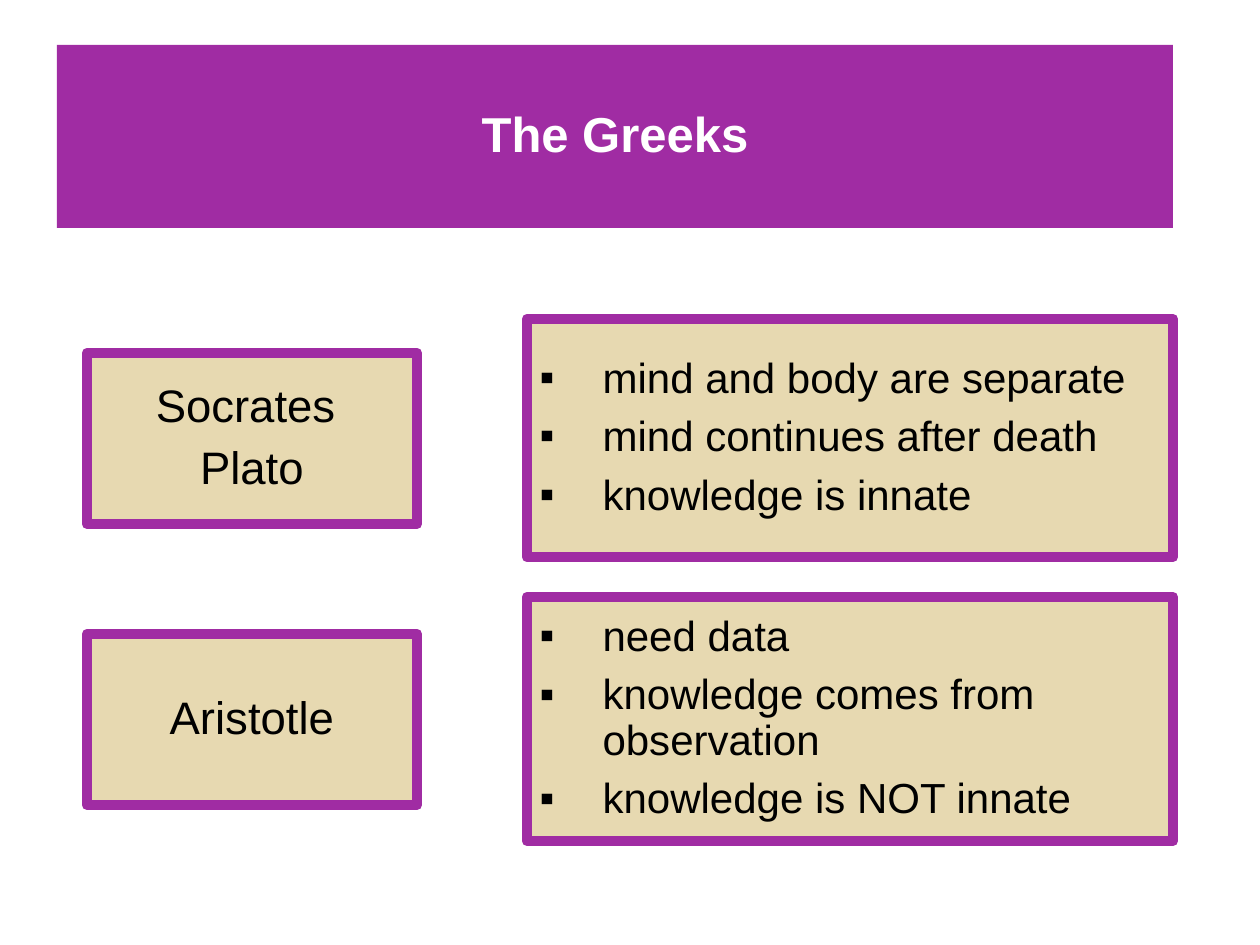
from lxml.etree import SubElement
from pptx import Presentation
from pptx.dml.color import RGBColor
from pptx.enum.text import MSO_ANCHOR, MSO_AUTO_SIZE, PP_ALIGN
from pptx.oxml.ns import qn
from pptx.util import Emu, Pt

PX = 914400 // 126
COLORS = {"purple": "A02CA3", "sand": "E7D9B1", "white": "FFFFFF", "black": "000000"}
FONT = "Arial"
INDENT = 63

# Two columns: names on the left, ideas on the right
NAME_X, NAME_W, NAME_H = 87, 330, 171
IDEA_X, IDEA_W = 527, 646

# Name top, names, idea top, idea height, ideas
ROWS = [
    (353, ["Socrates ", "Plato"], 319, 238,
     ["mind and body are separate", "mind continues after death", "knowledge is innate"]),
    (634, ["Aristotle"], 597, 244,
     ["need data", "knowledge comes from observation", "knowledge is NOT innate"]),
]


def px(n):
    return Emu(n * PX)


def rgb(name):
    return RGBColor.from_string(COLORS[name])


def place(sp, x, y, w, h, fill):
    """Position and fill a placeholder, with its text in the middle."""
    sp.left, sp.top, sp.width, sp.height = px(x), px(y), px(w), px(h)
    sp.fill.solid()
    sp.fill.fore_color.rgb = rgb(fill)
    tf = sp.text_frame
    tf.word_wrap = True
    tf.auto_size = MSO_AUTO_SIZE.NONE
    tf.vertical_anchor = MSO_ANCHOR.MIDDLE


def add_text(p, text, size, color, bold=False):
    p.line_spacing = 0.9
    r = p.add_run()
    r.text = text
    r.font.name, r.font.size, r.font.bold = FONT, Pt(size), bold
    r.font.color.rgb = rgb(color)


def set_bullet(p):
    """Give a paragraph a square bullet with a hanging indent."""
    pPr = p._p.get_or_add_pPr()
    pPr.set("marL", str(px(INDENT)))
    pPr.set("indent", str(px(-INDENT)))
    SubElement(pPr, qn("a:buFont"), typeface=FONT)
    SubElement(pPr, qn("a:buChar"), char="▪")


def fill_title(sp, text):
    place(sp, 57, 45, 1116, 183, "purple")
    p = sp.text_frame.paragraphs[0]
    p.alignment = PP_ALIGN.CENTER
    add_text(p, text, 28, "white", bold=True)


def fill_box(sp, x, y, w, h, lines, size, bulleted=False):
    place(sp, x, y, w, h, "sand")
    sp.line.color.rgb = rgb("purple")
    sp.line.width = Pt(6)
    tf = sp.text_frame
    for i, text in enumerate(lines):
        p = tf.add_paragraph() if i else tf.paragraphs[0]
        p.alignment = PP_ALIGN.LEFT if bulleted else PP_ALIGN.CENTER
        p.space_before = Pt(7.5)
        add_text(p, text, size, "black")
        if bulleted:
            set_bullet(p)


def main():
    prs = Presentation()
    prs.slide_width, prs.slide_height = px(1260), px(945)
    # The comparison layout has a title and four body placeholders
    s = prs.slides.add_slide(prs.slide_layouts[4])
    bodies = {sp.placeholder_format.idx: sp for sp in s.placeholders}

    fill_title(s.shapes.title, "The Greeks")

    # Names and their ideas, row by row
    for (name_y, names, idea_y, idea_h, ideas), idx in zip(ROWS, (1, 3)):
        fill_box(bodies[idx], NAME_X, name_y, NAME_W, NAME_H, names, 26)
        fill_box(bodies[idx + 1], IDEA_X, idea_y, IDEA_W, idea_h, ideas, 24, bulleted=True)

    # Date, footer and number placeholders are not copied to new slides
    prs.save("out.pptx")


if __name__ == "__main__":
    main()
